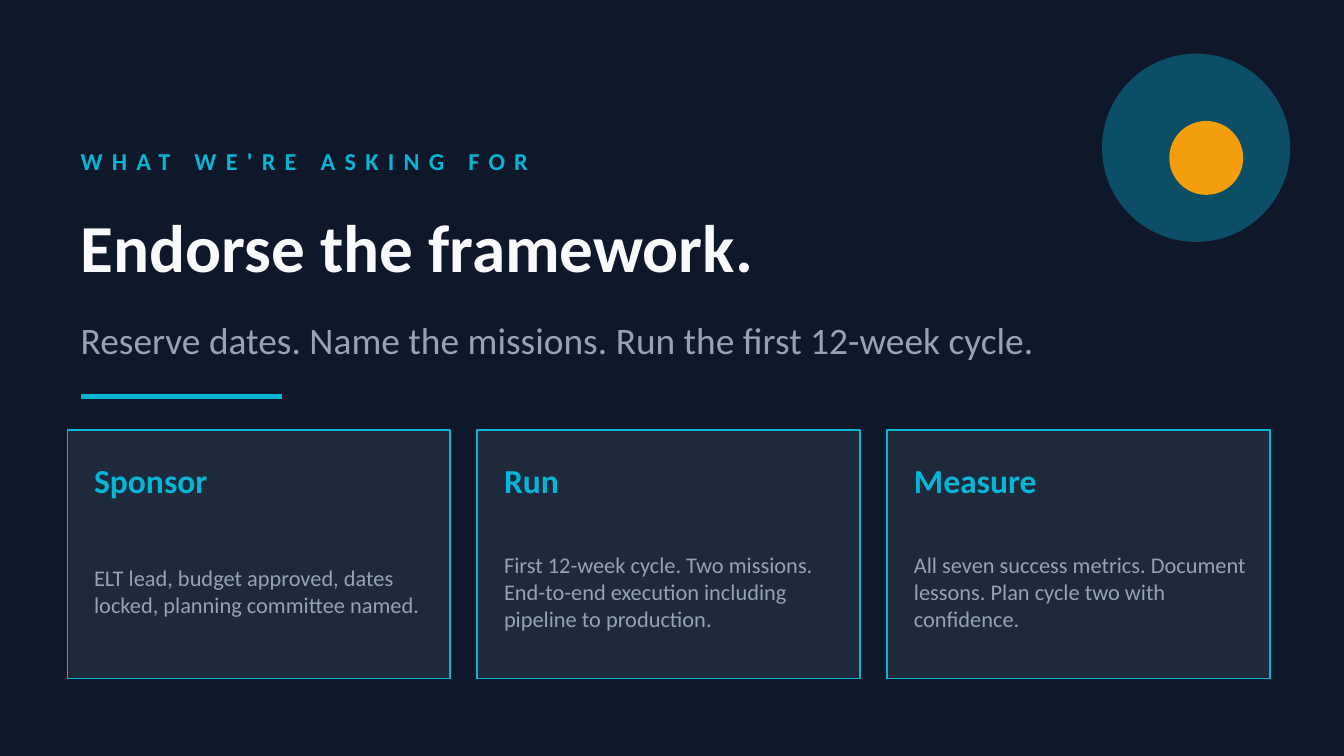
from lxml.etree import SubElement
from pptx import Presentation
from pptx.dml.color import RGBColor
from pptx.enum.shapes import MSO_CONNECTOR as Connector, MSO_SHAPE as Shape
from pptx.enum.text import MSO_ANCHOR as Anchor, MSO_AUTO_SIZE as AutoSize, PP_ALIGN as Align
from pptx.oxml.ns import qn
from pptx.util import Inches, Pt

NAVY = RGBColor(0x0F, 0x17, 0x2A)
PANEL = RGBColor(0x1E, 0x29, 0x3B)
CYAN = RGBColor(0x06, 0xB6, 0xD4)
AMBER = RGBColor(0xF5, 0x9E, 0x0B)
WHITE = RGBColor(0xF8, 0xFA, 0xFC)
GREY = RGBColor(0x94, 0xA3, 0xB8)
FONT = "Calibri"

ASKS = [
    ("Sponsor", "ELT lead, budget approved, dates locked, planning committee named."),
    ("Run", "First 12-week cycle. Two missions. End-to-end execution including pipeline to production."),
    ("Measure", "All seven success metrics. Document lessons. Plan cycle two with confidence."),
]


def place(part, left, top, width, height):
    """Move and size a placeholder."""
    part.left, part.top, part.width, part.height = left, top, width, height
    return part


def write(holder, text, size, color, bold=False, spacing=0):
    """Fill a text holder with one left-aligned, vertically centred run."""
    frame = holder.text_frame
    frame.word_wrap = True
    frame.auto_size = AutoSize.NONE
    frame.vertical_anchor = Anchor.MIDDLE
    frame.margin_left = frame.margin_right = frame.margin_top = frame.margin_bottom = 0
    paragraph = frame.paragraphs[0]
    paragraph.alignment = Align.LEFT
    paragraph.space_before = Pt(0)
    run = paragraph.add_run()
    run.text = text
    run.font.name = FONT
    run.font.size = Pt(size)
    run.font.bold = bold
    run.font.color.rgb = color
    if spacing:
        run.font._element.set("spc", str(spacing * 100))


def add_filled(slide, preset, left, top, width, height, color):
    """Add a flat shape without outline or shadow."""
    filled = slide.shapes.add_shape(preset, left, top, width, height)
    filled.shadow.inherit = False
    filled.fill.solid()
    filled.fill.fore_color.rgb = color
    filled.line.fill.background()
    return filled


def add_emblem(slide, left, top, size):
    """Draw a translucent disc with a small amber dot inside it."""
    disc = add_filled(slide, Shape.OVAL, left, top, size, size, CYAN)
    tint = disc.fill._xPr.find(qn("a:solidFill"))[0]
    SubElement(tint, qn("a:alpha")).set("val", "35000")
    dot = Inches(0.55)
    add_filled(slide, Shape.OVAL, left + Inches(0.5), top + Inches(0.5), dot, dot, AMBER)


def add_heading(slide, left, top, width):
    """Place the eyebrow, title, subtitle and accent rule."""
    eyebrow = slide.shapes.add_textbox(left, top, Inches(6), Inches(0.4))
    write(eyebrow, "WHAT WE'RE ASKING FOR", 13, CYAN, bold=True, spacing=5)
    title = place(slide.shapes.title, left, top + Inches(0.4), width, Inches(0.85))
    write(title, "Endorse the framework.", 36, WHITE, bold=True)
    subtitle = place(slide.placeholders[1], left, top + Inches(1.25), width, Inches(0.55))
    write(subtitle, "Reserve dates. Name the missions. Run the first 12-week cycle.", 20, GREY)
    rule_top = top + Inches(1.95)
    rule = slide.shapes.add_connector(
        Connector.STRAIGHT, left, rule_top, left + Inches(1.5), rule_top)
    rule.line.color.rgb = CYAN
    rule.line.width = Pt(2.5)
    SubElement(rule._element.spPr, qn("a:effectLst"))


def add_card(slide, left, top, width, height, heading, detail):
    """Draw one outlined card with its heading and detail."""
    card = add_filled(slide, Shape.RECTANGLE, left, top, width, height, PANEL)
    card.line.color.rgb = CYAN
    card.line.width = Pt(0.75)
    text_left, text_width = left + Inches(0.2), width - Inches(0.3)
    heading_box = slide.shapes.add_textbox(
        text_left, top + Inches(0.15), text_width, Inches(0.45))
    write(heading_box, heading, 18, CYAN, bold=True)
    detail_box = slide.shapes.add_textbox(
        text_left, top + Inches(0.65), text_width, height - Inches(0.75))
    write(detail_box, detail, 12, GREY)


def add_cards(slide, left, top, width, height):
    """Spread the asks as equal cards across the given box."""
    gap = Inches(0.2)
    card_width = (width - gap * (len(ASKS) - 1)) // len(ASKS)
    for index, (heading, detail) in enumerate(ASKS):
        card_left = left + index * (card_width + gap)
        add_card(slide, card_left, top, card_width, height, heading, detail)


def main():
    """Build and save the closing slide."""
    deck = Presentation()
    deck.slide_width = Inches(10)
    deck.slide_height = deck.slide_width * 9 // 16
    slide = deck.slides.add_slide(deck.slide_layouts[0])
    slide.background.fill.solid()
    slide.background.fill.fore_color.rgb = NAVY
    add_emblem(slide, Inches(8.2), Inches(0.4), Inches(1.4))
    add_heading(slide, Inches(0.6), Inches(1), Inches(9))
    add_cards(slide, Inches(0.5), Inches(3.2), Inches(8.95), Inches(1.85))
    deck.save("out.pptx")


if __name__ == "__main__":
    main()
